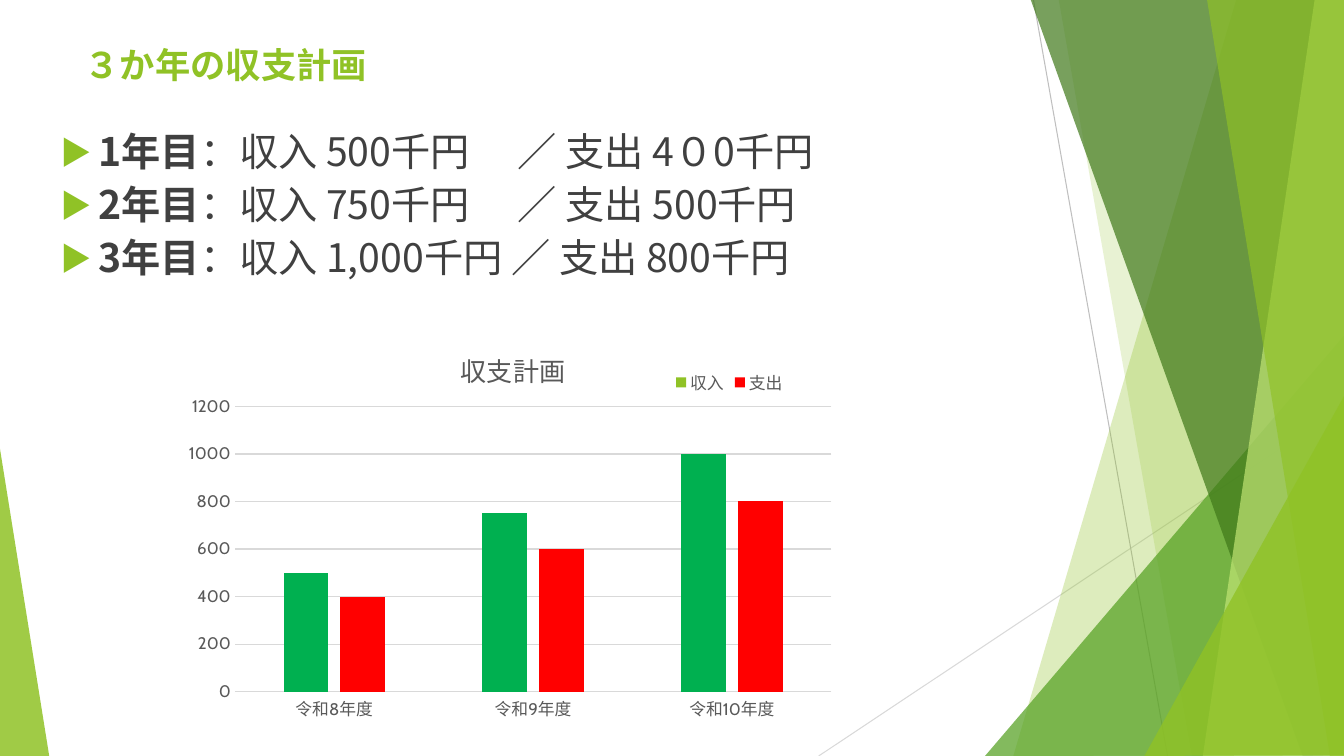
from lxml.etree import SubElement
from pptx import Presentation
from pptx.chart.data import CategoryChartData
from pptx.dml.color import RGBColor
from pptx.enum.chart import XL_CHART_TYPE, XL_LEGEND_POSITION, XL_TICK_MARK
from pptx.enum.shapes import MSO_CONNECTOR
from pptx.enum.text import MSO_ANCHOR, PP_ALIGN
from pptx.oxml.ns import qn
from pptx.util import Emu, Pt

PX = 9144  # 100 px to the inch
FONT = "Noto Sans CJK JP"
CHART_FONT = "Cabin"
LIME, GREEN, RED = "90C226", "00B050", "FF0000"
DARK, GREY, PALE = "404040", "595959", "D9D9D9"

RAYS = [
    ((812, 750), (1333, 403), PALE),
    ((1025, 0), (1158, 750), "BFBFBF"),
]
# colour, opacity in percent, corners
FACETS = [
    (LIME, 30, [(1226, 0), (1005, 750), (1333, 749), (1334, -1)]),
    (LIME, 20, [(1050, -1), (1182, 750), (1334, 750), (1333, -1)]),
    ("54A021", 72, [(977, 750), (1333, 333), (1334, 750)]),
    ("3F7819", 70, [(1022, -1), (1292, 750), (1334, 749), (1334, -1)]),
    ("C0E474", 70, [(1304, -1), (1193, 750), (1334, 750), (1333, -1)]),
    (LIME, 65, [(1197, -1), (1319, 750), (1336, 750), (1334, -1)]),
    (LIME, 80, [(1135, 750), (1333, 393), (1334, 749)]),
    (LIME, 85, [(-1, 439), (49, 751), (-1, 750)]),
]
YEARS = [
    ("1年目", "：収入 500千円 　／ 支出 4０0千円"),
    ("2年目", "：収入 750千円 　／ 支出 500千円"),
    ("3年目", "：収入 1,000千円 ／ 支出 800千円"),
]


def px(*lengths):
    return [Emu(length * PX) for length in lengths]


def color(hex_string):
    return RGBColor.from_string(hex_string)


def fill_solid(item, hex_string):
    item.format.fill.solid()
    item.format.fill.fore_color.rgb = color(hex_string)


def style_line(line, hex_string):
    line.color.rgb = color(hex_string)
    line.width = Pt(0.75)


def style_font(font, size, hex_string, name=CHART_FONT, bold=False):
    font.size, font.name, font.bold = Pt(size), name, bold
    font.color.rgb = color(hex_string)


def add_span(para, text, size, hex_string, bold=False):
    span = para.add_run()
    span.text = text
    style_font(span.font, size, hex_string, FONT, bold)
    SubElement(span.font._element, qn("a:ea"), typeface=FONT)


def add_ray(page, start, end, hex_string):
    ray = page.shapes.add_connector(MSO_CONNECTOR.STRAIGHT, *px(*start, *end))
    style_line(ray.line, hex_string)
    SubElement(ray.element.spPr, qn("a:effectLst"))


def add_facet(page, hex_string, opacity, corners):
    builder = page.shapes.build_freeform(*corners[0], scale=PX)
    builder.add_line_segments(corners[1:], close=True)
    facet = builder.convert_to_shape()
    facet.shadow.inherit = False
    facet.line.fill.background()
    facet.fill.solid()
    facet.fill.fore_color.rgb = color(hex_string)
    tint = facet.element.spPr.find(f".//{qn('a:srgbClr')}")
    SubElement(tint, qn("a:alpha"), val=str(opacity * 1000))


def format_title(page, text):
    title = page.shapes.title
    title.left, title.top, title.width, title.height = px(74, 41, 940, 67)
    frame = title.text_frame
    frame.vertical_anchor = MSO_ANCHOR.TOP
    frame.margin_top = px(2)[0]
    para = frame.paragraphs[0]
    para.alignment = PP_ALIGN.LEFT
    add_span(para, text, 25.2, LIME, bold=True)


def add_bullet(para):
    """Give the paragraph a green triangle and a hanging indent."""
    props = para._p.get_or_add_pPr()
    props.set("marL", str(38 * PX))
    props.set("indent", str(-38 * PX))
    SubElement(SubElement(props, qn("a:buClr")), qn("a:srgbClr"), val=LIME)
    SubElement(props, qn("a:buSzPct"), val="80000")
    SubElement(props, qn("a:buFont"), typeface=FONT)
    SubElement(props, qn("a:buChar"), char="▶")


def add_year_list(page, years):
    frame = page.shapes.add_textbox(*px(50, 125, 940, 193)).text_frame
    frame.word_wrap = True
    frame.margin_top = px(9)[0]
    for index, (year, plan) in enumerate(years):
        para = frame.paragraphs[0] if index == 0 else frame.add_paragraph()
        para.line_spacing = 0.83
        para.space_before = Pt(10 if index else 0)
        add_bullet(para)
        add_span(para, year, 28, DARK, bold=True)
        add_span(para, plan, 28, DARK)


def place_part(chart, tag, index, **fractions):
    """Fix a chart part at fractions of the chart's size."""
    part = chart.element.xpath(f".//c:{tag}")[0]
    for old in part.findall(qn("c:layout")):
        part.remove(old)
    layout = SubElement(part, qn("c:layout"))
    part.insert(index, layout)
    manual = SubElement(layout, qn("c:manualLayout"))
    if tag == "plotArea":
        SubElement(manual, qn("c:layoutTarget"), val="inner")
    for side in ("x", "y"):
        SubElement(manual, qn(f"c:{side}Mode"), val="edge")
    for name, value in fractions.items():
        SubElement(manual, qn(f"c:{name}"), val=str(value))


def format_axes(chart):
    for axis in (chart.category_axis, chart.value_axis):
        axis.major_tick_mark = axis.minor_tick_mark = XL_TICK_MARK.NONE
        style_font(axis.tick_labels.font, 12, GREY)
    style_line(chart.category_axis.format.line, PALE)
    values = chart.value_axis
    values.minimum_scale, values.maximum_scale, values.major_unit = 0, 1200, 200
    values.format.line.fill.background()
    style_line(values.major_gridlines.format.line, PALE)


def add_budget_chart(page):
    data = CategoryChartData()
    data.categories = ["令和8年度", "令和9年度", "令和10年度"]
    data.add_series("収入", [500, 750, 1000])
    data.add_series("支出", [400, 600, 800])
    chart = page.shapes.add_chart(
        XL_CHART_TYPE.COLUMN_CLUSTERED, *px(173, 318, 665, 449), data).chart
    style_font(chart.font, 10, "000000")
    plot = chart.plots[0]
    plot.vary_by_categories = False
    plot.gap_width, plot.overlap = 219, -27
    income, spending = plot.series
    fill_solid(income, LIME)
    fill_solid(spending, RED)
    for index in range(3):
        fill_solid(income.points[index], GREEN)
    format_axes(chart)

    chart.has_title = True
    add_span(chart.chart_title.text_frame.paragraphs[0], "収支計画", 18.6, GREY)
    chart.has_legend = True
    chart.legend.position = XL_LEGEND_POSITION.BOTTOM
    chart.legend.include_in_layout = False
    style_font(chart.legend.font, 12, GREY)
    place_part(chart, "title", 1, x=0.42, y=0.05)
    place_part(chart, "legend", 1, x=0.74, y=0.1)
    place_part(chart, "plotArea", 0, x=0.09, y=0.19, w=0.89, h=0.63)


def main():
    deck = Presentation()
    deck.slide_width, deck.slide_height = px(1333, 750)
    page = deck.slides.add_slide(deck.slide_layouts[5])
    for ray in RAYS:
        add_ray(page, *ray)
    for facet in FACETS:
        add_facet(page, *facet)
    format_title(page, "３か年の収支計画")
    add_year_list(page, YEARS)
    add_budget_chart(page)
    deck.save("out.pptx")


if __name__ == "__main__":
    main()
